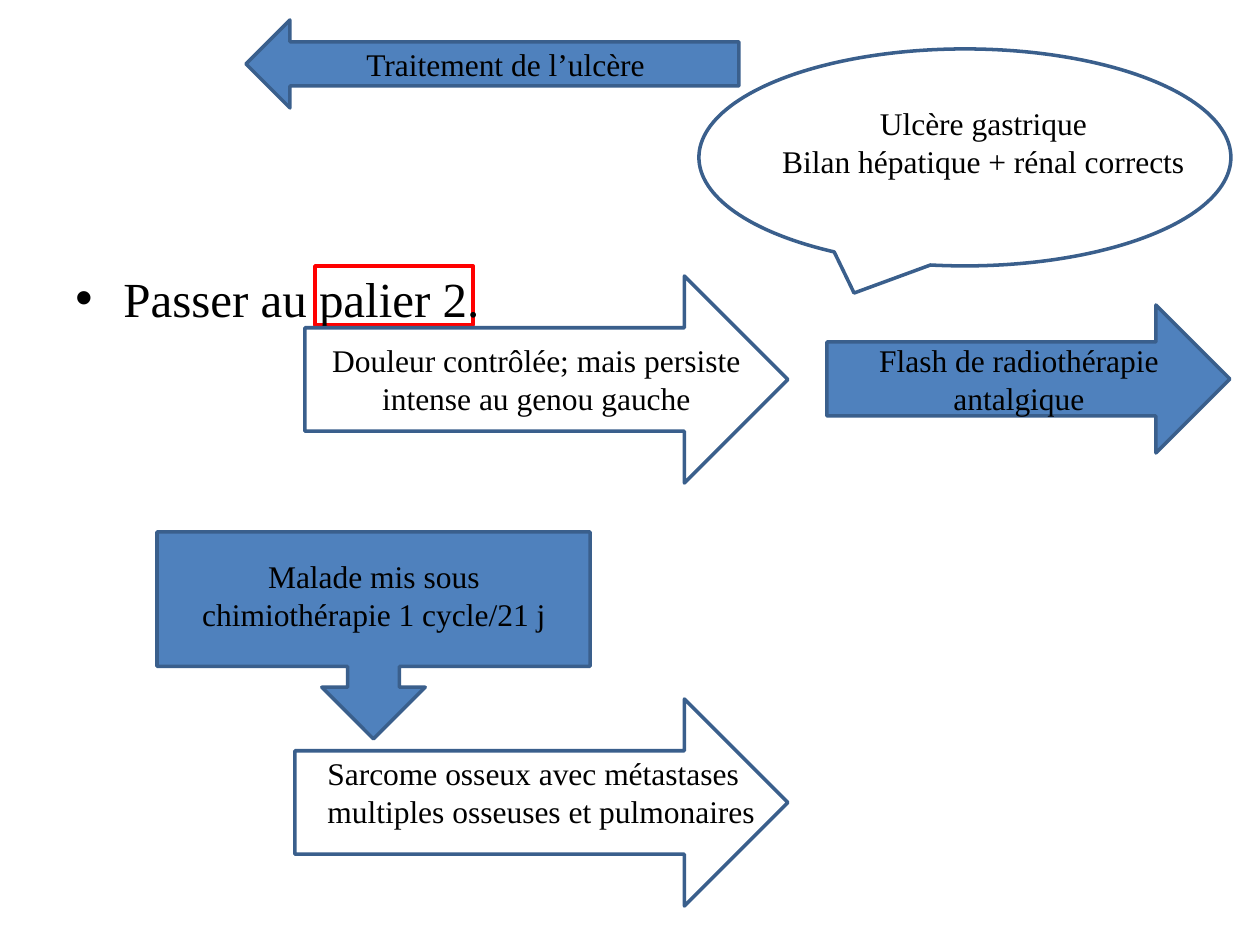
from dataclasses import dataclass

from lxml.etree import SubElement
from pptx import Presentation
from pptx.dml.color import RGBColor
from pptx.enum.shapes import MSO_SHAPE as Preset
from pptx.enum.text import MSO_AUTO_SIZE as AutoSize, PP_ALIGN as Align
from pptx.oxml.ns import qn
from pptx.util import Emu, Pt

EMU_PER_PX = 914400 // 126


@dataclass(frozen=True)
class Theme:
    white: RGBColor = RGBColor(0xFF, 0xFF, 0xFF)
    black: RGBColor = RGBColor(0, 0, 0)
    blue: RGBColor = RGBColor(0x4F, 0x81, 0xBD)
    outline: RGBColor = RGBColor(0x3A, 0x5F, 0x8C)
    red: RGBColor = RGBColor(0xFF, 0, 0)
    font: str = "Times New Roman"
    label_size: int = 18
    bullet_size: int = 28
    line_width: int = 2


THEME = Theme()


def px(value):
    return Emu(value * EMU_PER_PX)


def box(bounds):
    return [px(value) for value in bounds]


def apply_format(target, values):
    for name, value in values.items():
        setattr(target, name, value)


def add_outlined(slide, preset, bounds, fill, line):
    shape = slide.shapes.add_shape(preset, *box(bounds))
    shape.shadow.inherit = False
    shape.fill.solid()
    shape.fill.fore_color.rgb = fill
    shape.line.color.rgb = line
    shape.line.width = Pt(THEME.line_width)


def add_text(slide, bounds, lines, size, align=Align.LEFT):
    frame = slide.shapes.add_textbox(*box(bounds)).text_frame
    apply_format(frame, {
        "text": "\n".join(lines),
        "word_wrap": True,
        "auto_size": AutoSize.SHAPE_TO_FIT_TEXT,
    })
    for paragraph in frame.paragraphs:
        paragraph.alignment = align
        font = paragraph.runs[0].font
        apply_format(font, {"name": THEME.font, "size": Pt(size)})
        font.color.rgb = THEME.black
    return frame


def add_bullet(slide, bounds, text, indent):
    frame = add_text(slide, bounds, [text], THEME.bullet_size)
    properties = frame.paragraphs[0]._p.get_or_add_pPr()
    properties.set("marL", str(px(indent)))
    properties.set("indent", str(px(-indent)))
    SubElement(properties, qn("a:buFont"), typeface="Arial")
    SubElement(properties, qn("a:buChar"), char="•")


def main():
    presentation = Presentation()
    apply_format(presentation, {"slide_width": px(1260), "slide_height": px(945)})
    slide = presentation.slides.add_slide(presentation.slide_layouts[6])

    add_outlined(slide, Preset.RECTANGLE, (315, 266, 158, 59), THEME.white, THEME.red)
    add_bullet(slide, (63, 262, 1134, 69), "Passer au palier 2.", 48)

    steps = [
        (Preset.OVAL_CALLOUT, (699, 49, 532, 217), THEME.white,
         (767, 98, 433, 89), Align.CENTER,
         ["Ulcère gastrique", "Bilan hépatique + rénal corrects"]),
        (Preset.RIGHT_ARROW, (305, 276, 483, 207), THEME.white,
         (315, 335, 443, 89), Align.CENTER,
         ["Douleur contrôlée; mais persiste intense au genou gauche"]),
        (Preset.RIGHT_ARROW, (295, 699, 493, 207), THEME.white,
         (315, 748, 483, 89), Align.LEFT,
         ["Sarcome osseux avec métastases multiples osseuses et pulmonaires"]),
        (Preset.LEFT_ARROW, (246, 20, 493, 88), THEME.blue,
         (354, 39, 344, 50), Align.LEFT,
         ["Traitement de l’ulcère"]),
        (Preset.RIGHT_ARROW, (827, 305, 403, 148), THEME.blue,
         (827, 335, 384, 89), Align.CENTER,
         ["Flash de radiothérapie antalgique"]),
        (Preset.DOWN_ARROW_CALLOUT, (157, 532, 433, 207), THEME.blue,
         (177, 551, 394, 89), Align.CENTER,
         ["Malade mis sous chimiothérapie 1 cycle/21 j"]),
    ]
    for preset, bounds, fill, text_bounds, align, lines in steps:
        add_outlined(slide, preset, bounds, fill, THEME.outline)
        add_text(slide, text_bounds, lines, THEME.label_size, align)

    presentation.save("out.pptx")


if __name__ == "__main__":
    main()
